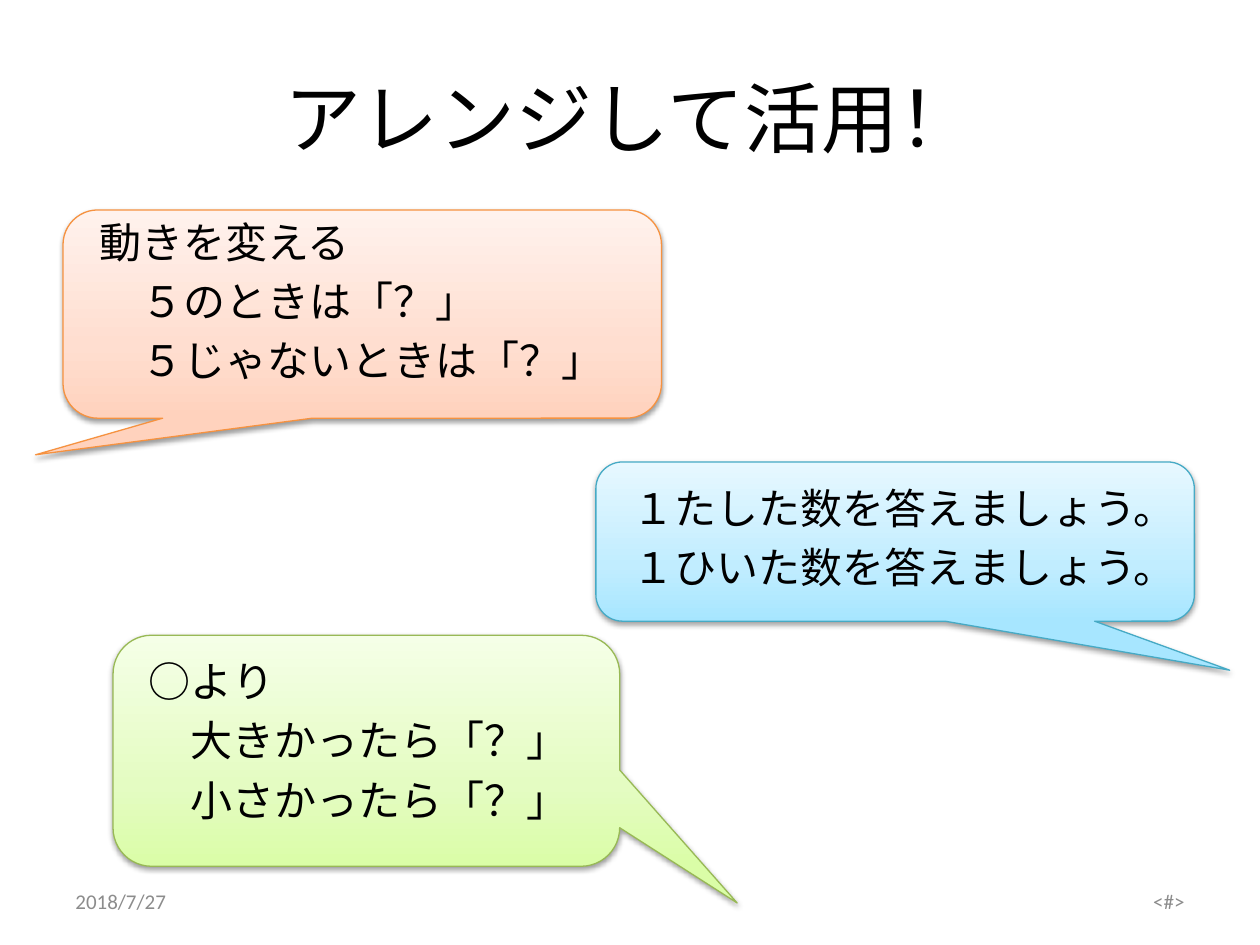
from copy import deepcopy
from dataclasses import dataclass

from lxml import etree
from pptx import Presentation
from pptx.dml.color import RGBColor
from pptx.enum import shapes, text
from pptx.oxml import ns
from pptx.slide import Slide
from pptx.util import Pt

BLACK = RGBColor(0x00, 0x00, 0x00)
GREY = RGBColor(0x8C, 0x8C, 0x8C)
ORANGE_LINE = RGBColor(0xF6, 0x92, 0x40)
BLUE_LINE = RGBColor(0x46, 0xAA, 0xC5)
GREEN_LINE = RGBColor(0x98, 0xB9, 0x55)
# From the bottom of the callout to its top
ORANGE_SHADES = RGBColor(0xFF, 0xD2, 0xBD), RGBColor(0xFF, 0xDE, 0xD0), RGBColor(0xFF, 0xF2, 0xED)
BLUE_SHADES = RGBColor(0xA7, 0xE6, 0xFF), RGBColor(0xC1, 0xED, 0xFF), RGBColor(0xE7, 0xF8, 0xFF)
GREEN_SHADES = RGBColor(0xDA, 0xFD, 0xA7), RGBColor(0xE4, 0xFC, 0xC2), RGBColor(0xF5, 0xFF, 0xE7)
SHADE_STOPS = 0, 0.35, 1

LEFT, CENTER, RIGHT = text.PP_ALIGN.LEFT, text.PP_ALIGN.CENTER, text.PP_ALIGN.RIGHT


def points(box):
    return [Pt(length) for length in box]


@dataclass
class Deck:
    slide: Slide
    latin_font: str = "Calibri"
    japanese_font: str = "Noto Sans CJK JP"
    title_size: float = 44
    body_size: float = 24
    footer_size: float = 12

    def add_run(self, paragraph, words, size, color, font):
        run = paragraph.add_run()
        run.text = words
        run.font.size = Pt(size)
        run.font.color.rgb = color
        run.font.name = font
        if font == self.japanese_font:
            east_asian = etree.SubElement(run.font._element, ns.qn("a:ea"))
            east_asian.set("typeface", font)

    def title(self, box, words):
        heading = self.slide.shapes.title
        heading.left, heading.top, heading.width, heading.height = points(box)
        frame = heading.text_frame
        frame.vertical_anchor = text.MSO_ANCHOR.MIDDLE
        paragraph = frame.paragraphs[0]
        paragraph.alignment = CENTER
        self.add_run(paragraph, words, self.title_size, BLACK, self.latin_font)

    def text_box(self, box, anchor):
        frame = self.slide.shapes.add_textbox(*points(box)).text_frame
        frame.word_wrap = True
        frame.vertical_anchor = anchor
        return frame

    def body(self, box, lines):
        frame = self.text_box(box, text.MSO_ANCHOR.TOP)
        for index, line in enumerate(lines):
            paragraph = frame.add_paragraph() if index else frame.paragraphs[0]
            paragraph.space_before = Pt(0.2 * self.body_size)
            paragraph.line_spacing = Pt(29)
            self.add_run(paragraph, line, self.body_size, BLACK, self.japanese_font)

    def footer(self, box, words, alignment):
        paragraph = self.text_box(box, text.MSO_ANCHOR.MIDDLE).paragraphs[0]
        paragraph.alignment = alignment
        self.add_run(paragraph, words, self.footer_size, GREY, self.latin_font)

    def callout(self, box, tip, shades, line_color):
        """Add a speech bubble; tip is its point, as a share of the size from the centre."""
        bubble = self.slide.shapes.add_shape(
            shapes.MSO_SHAPE.ROUNDED_RECTANGULAR_CALLOUT, *points(box))
        for index, value in enumerate((*tip, 0.167)):
            bubble.adjustments[index] = value
        self.shade(bubble.fill, shades)
        bubble.line.color.rgb = line_color
        bubble.line.width = Pt(0.75)
        self.drop_shadow(bubble)

    def shade(self, fill, shades):
        fill.gradient()
        fill.gradient_angle = 90
        first = fill.gradient_stops[0]._gs
        first.addnext(deepcopy(first))
        for stop, position, color in zip(fill.gradient_stops, SHADE_STOPS, shades):
            stop.position = position
            stop.color.rgb = color

    def drop_shadow(self, shape):
        shape.shadow.inherit = False
        effects = shape._element.spPr.find(ns.qn("a:effectLst"))
        shadow = etree.SubElement(
            effects, ns.qn("a:outerShdw"), blurRad=str(Pt(3.1)), dist=str(Pt(1.6)),
            dir="5400000", rotWithShape="0")
        color = etree.SubElement(shadow, ns.qn("a:srgbClr"), val=str(BLACK))
        etree.SubElement(color, ns.qn("a:alpha"), val="38000")


def main():
    presentation = Presentation()
    presentation.slide_width, presentation.slide_height = Pt(720), Pt(540)
    deck = Deck(presentation.slides.add_slide(presentation.slide_layouts.get_by_name("Title Only")))

    deck.title((36, 21.6, 648, 90), "アレンジして活用！")

    deck.callout((36, 120, 342, 119), (-0.546, 0.676), ORANGE_SHADES, ORANGE_LINE)
    deck.body((49.6, 120, 342, 126),
              ("動きを変える", "　５のときは「？」", "　５じゃないときは「？」"))

    deck.callout((340.5, 264, 342, 91), (0.559, 0.808), BLUE_SHADES, BLUE_LINE)
    deck.body((354.2, 272, 342, 90),
              ("１たした数を答えましょう。", "１ひいた数を答えましょう。"))

    deck.callout((64.6, 363, 289.5, 132), (0.732, 0.659), GREEN_SHADES, GREEN_LINE)
    deck.body((78, 371, 300, 106.5),
              ("○より", "　大きかったら「？」", "　小さかったら「？」"))

    deck.footer((36, 500.5, 168, 28.8), "2018/7/27", LEFT)
    deck.footer((516, 500.5, 168, 28.8), "<#>", RIGHT)

    presentation.save("out.pptx")


if __name__ == "__main__":
    main()
